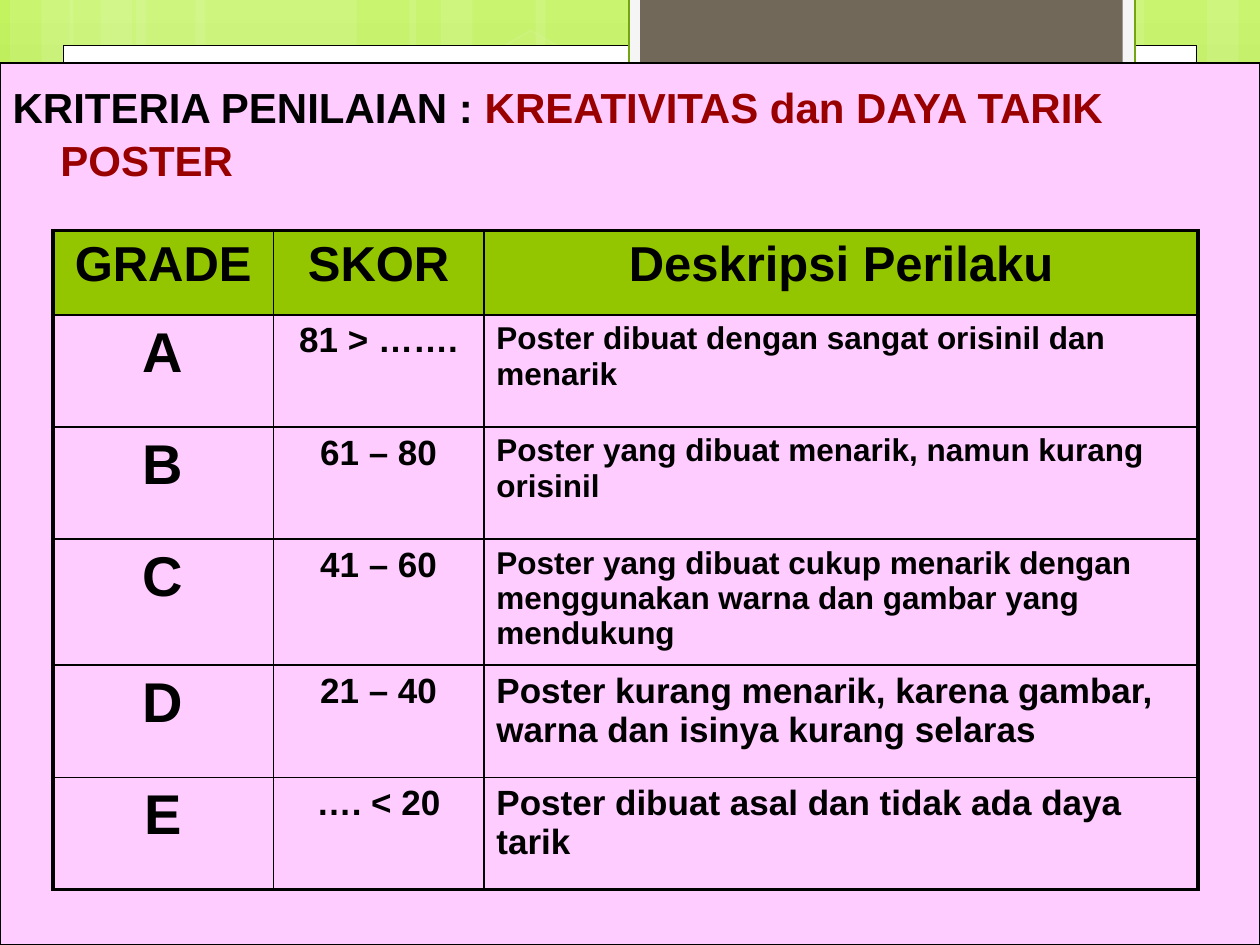
from copy import deepcopy

from lxml.etree import SubElement
from pptx import Presentation
from pptx.dml.color import RGBColor
from pptx.enum.shapes import MSO_SHAPE as Shape
from pptx.enum.text import MSO_ANCHOR as Anchor, PP_ALIGN as Align
from pptx.oxml.ns import qn
from pptx.util import Inches, Pt

FONT = "Arial"
BLACK = RGBColor(0x00, 0x00, 0x00)
WHITE = RGBColor(0xFF, 0xFF, 0xFF)
MAROON = RGBColor(0x99, 0x00, 0x00)
PINK = RGBColor(0xFF, 0xCC, 0xFF)
GREEN = RGBColor(0x94, 0xC6, 0x00)
DARK_GREEN = RGBColor(0x74, 0xA5, 0x10)
PALE_GRAY = RGBColor(0xF5, 0xF5, 0xF5)
BROWN = RGBColor(0x71, 0x68, 0x5A)
BACKDROP = [
    (0, RGBColor(0xC3, 0xF3, 0x5F)),
    (0.62, RGBColor(0x93, 0xBF, 0x3F)),
    (1, RGBColor(0x81, 0xA5, 0x3E)),
]

HEADING = [("KRITERIA PENILAIAN : ", BLACK), ("KREATIVITAS dan DAYA TARIK POSTER", MAROON)]
HEADERS = ("GRADE", "SKOR", "Deskripsi Perilaku")
GRADES = [
    ("A", "81 > …….", "Poster dibuat dengan sangat orisinil dan menarik", 18),
    ("B", "61 – 80", "Poster yang dibuat menarik, namun kurang orisinil", 18),
    ("C", "41 – 60", "Poster yang dibuat cukup menarik dengan menggunakan warna dan gambar yang mendukung", 18),
    ("D", "21 – 40", "Poster kurang menarik, karena gambar, warna dan isinya kurang selaras", 20),
    ("E", "…. < 20", "Poster dibuat asal dan tidak ada daya tarik", 20),
]
COLUMN_WIDTHS = (1.75, 1.67, 5.67)
ROW_HEIGHTS = (0.67, 0.89, 0.89, 1, 0.89, 0.89)

STRIPES = [
    (1.08, 1.75), (0.08, 0.5), (0.33, 0.83), (1.55, 1.75), (0.55, 0.5), (0.8, 0.83),
    (7.33, 1.75), (9.58, 0.5), (9, 0.83), (4.25, 3.08), (3.25, 0.5), (3.5, 0.83),
]
PANELS = [
    ((0.5, 0.36, 9, 6.76), WHITE, BLACK, 0.5),
    ((4.99, -0.02, 4.02, 0.76), PALE_GRAY, DARK_GREEN, 1.25),
    ((5.08, -0.02, 3.83, 0.68), BROWN, None, 0),
    ((0, 0.5, 10, 7), PINK, BLACK, 0.75),
]


def set_alpha(color_parent, percent):
    color = color_parent.find(".//" + qn("a:srgbClr"))
    SubElement(color, qn("a:alpha"), val=str(percent * 1000))


def paint_backdrop(slide):
    fill = slide.background.fill
    fill.gradient()
    fill.gradient_angle = 270
    stop_list = slide._element.find(".//" + qn("a:gsLst"))
    stop_list.append(deepcopy(stop_list[-1]))
    for stop, (position, color) in zip(fill.gradient_stops, BACKDROP):
        stop.position = position
        stop.color.rgb = color


def add_panel(slide, box, color, outline=None, weight=0, kind=Shape.RECTANGLE):
    panel = slide.shapes.add_shape(kind, *map(Inches, box))
    panel.shadow.inherit = False
    panel.fill.solid()
    panel.fill.fore_color.rgb = color
    if outline is None:
        panel.line.fill.background()
    else:
        panel.line.color.rgb = outline
        panel.line.width = Pt(weight)
    return panel


def add_run(paragraph, words, size, color=BLACK):
    run = paragraph.add_run()
    run.text = words
    run.font.name = FONT
    run.font.size = Pt(size)
    run.font.bold = True
    run.font.color.rgb = color


def add_heading(slide):
    heading = slide.shapes.title
    slide.shapes._spTree.append(heading._element)
    heading.left, heading.top, heading.width, heading.height = map(Inches, (0, 0.58, 10, 0.9))
    heading.text_frame.word_wrap = True
    heading.text_frame.vertical_anchor = Anchor.TOP
    paragraph = heading.text_frame.paragraphs[0]
    paragraph.alignment = Align.LEFT
    paragraph.line_spacing = 1.05
    hanging = Inches(0.38)
    properties = paragraph._p.get_or_add_pPr()
    properties.set("marL", str(hanging))
    properties.set("indent", str(-hanging))
    for words, color in HEADING:
        add_run(paragraph, words, 24, color)


def set_borders(cell, weights):
    properties = cell._tc.get_or_add_tcPr()
    for position, (side, weight) in enumerate(weights.items()):
        line = properties.makeelement(qn("a:" + side), {"w": str(Pt(weight))})
        fill = SubElement(line, qn("a:solidFill"))
        SubElement(fill, qn("a:srgbClr"), val=str(BLACK))
        properties.insert(position, line)


def add_grades(slide):
    rows = [[(header, 28) for header in HEADERS]]
    rows += [[(grade, 32), (score, 20), (text, size)] for grade, score, text, size in GRADES]
    last_row, last_column = len(rows) - 1, len(HEADERS) - 1
    box = (0.42, 1.83, sum(COLUMN_WIDTHS), sum(ROW_HEIGHTS))
    table = slide.shapes.add_table(len(rows), len(HEADERS), *map(Inches, box)).table
    table.first_row = table.horz_banding = False
    for column, width in zip(table.columns, COLUMN_WIDTHS):
        column.width = Inches(width)
    for row, height in zip(table.rows, ROW_HEIGHTS):
        row.height = Inches(height)
    for r, row in enumerate(rows):
        for c, (words, size) in enumerate(row):
            cell = table.cell(r, c)
            if r == 0:
                cell.fill.solid()
                cell.fill.fore_color.rgb = GREEN
            else:
                cell.fill.background()
            paragraph = cell.text_frame.paragraphs[0]
            paragraph.alignment = Align.LEFT if r and c == last_column else Align.CENTER
            add_run(paragraph, words, size)
            outer = {"lnL": c == 0, "lnR": c == last_column, "lnT": r == 0, "lnB": r == last_row}
            set_borders(cell, {side: 2.25 if edge else 1 for side, edge in outer.items()})


def main():
    deck = Presentation()
    deck.slide_width, deck.slide_height = Inches(10), Inches(7.5)
    slide = deck.slides.add_slide(deck.slide_layouts[5])
    paint_backdrop(slide)
    for left, width in STRIPES:
        stripe = add_panel(slide, (left, 0, width, 7.5), WHITE)
        set_alpha(stripe._element.spPr, 10)
    hexagon = add_panel(slide, (3.34, 0.36, 1.75, 1.52), WHITE, WHITE, 1, Shape.HEXAGON)
    hexagon.adjustments[0] = 0.285
    hexagon.rotation = 30
    set_alpha(hexagon._element.spPr.find(qn("a:solidFill")), 4)
    set_alpha(hexagon._element.spPr.find(qn("a:ln")), 8)
    for panel in PANELS:
        add_panel(slide, *panel)
    add_heading(slide)
    add_grades(slide)
    deck.save("out.pptx")


if __name__ == "__main__":
    main()
